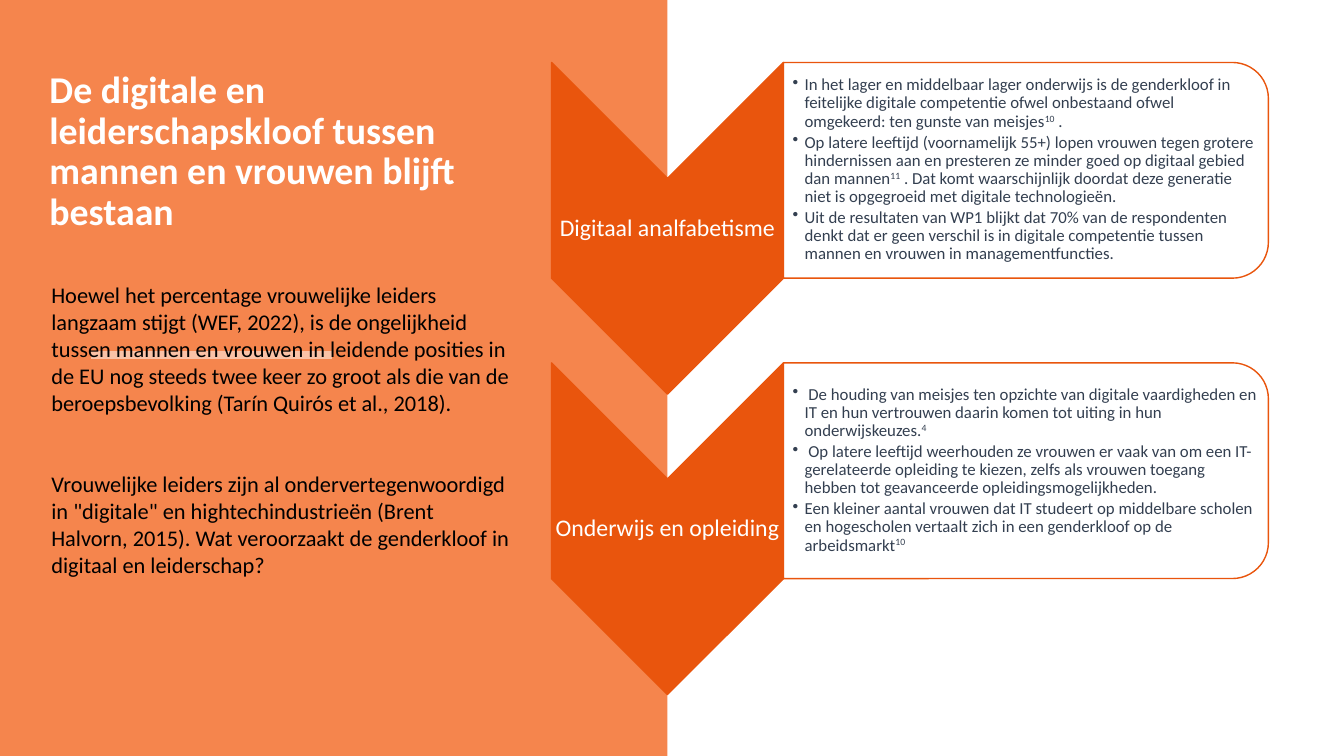
import pptx
import pptx.util
import pptx.dml.color
import pptx.enum.shapes
import pptx.enum.text
import lxml.etree

Inches, Pt = pptx.util.Inches, pptx.util.Pt
SHAPES = pptx.enum.shapes.MSO_SHAPE
ANCHOR = pptx.enum.text.MSO_ANCHOR
A = "{http://schemas.openxmlformats.org/drawingml/2006/main}"

deck = pptx.Presentation()
deck.slide_width, deck.slide_height = Inches(13.33), Inches(7.5)
slide = deck.slides.add_slide(deck.slide_layouts[6])


def paint(target, color):
    if hasattr(target, "solid"):
        target.solid()
        target = target.fore_color
    elif hasattr(target, "color"):
        target = target.color
    target.rgb = pptx.dml.color.RGBColor.from_string(color)


def write(box, insets, anchor, paragraphs, size, color, spacing=1.0):
    frame = slide.shapes.add_textbox(*map(Inches, box)).text_frame
    frame.word_wrap = True
    frame.vertical_anchor = anchor
    frame.margin_left, frame.margin_top, frame.margin_right, frame.margin_bottom = map(Inches, insets)
    for index, text in enumerate(paragraphs):
        paragraph = frame.paragraphs[0] if index == 0 else frame.add_paragraph()
        paragraph.line_spacing = spacing
        paragraph.font.name = "Calibri"
        paragraph.font.size = Pt(size)
        paint(paragraph.font, color)
        for part, words in enumerate(text.split("^")):
            if words:
                run = paragraph.add_run()
                run.text = words
                if part % 2:
                    run._r.get_or_add_rPr().set("baseline", "30000")
    return frame.paragraphs


center_x = 6.62
panel = slide.shapes.add_shape(SHAPES.RECTANGLE, 0, 0, Inches(center_x), deck.slide_height)
panel.shadow.inherit = False
paint(panel.fill, "F5854D")
panel.line.fill.background()

accent = slide.shapes.add_connector(
    pptx.enum.shapes.MSO_CONNECTOR.STRAIGHT, Inches(3.29), Inches(3.52), Inches(0.9), Inches(3.52))
paint(accent.line, "FAC2A6")
accent.line.width = Pt(6)
lxml.etree.SubElement(accent._element.spPr, A + "effectLst")

panel_insets = (0, 0.05, 0.1, 0.05)
title = write((0.49, 0.45, 4.38, 1.92), panel_insets, ANCHOR.BOTTOM,
              ["De digitale en leiderschapskloof tussen mannen en vrouwen blijft bestaan"],
              27, "FFFFFF", 0.9)
title[0].font.bold = True

intro = write((0.51, 2.74, 4.66, 3.52), panel_insets, ANCHOR.TOP, [
    "Hoewel het percentage vrouwelijke leiders langzaam stijgt (WEF, 2022), is de ongelijkheid "
    "tussen mannen en vrouwen in leidende posities in de EU nog steeds twee keer zo groot als die "
    "van de beroepsbevolking (Tarín Quirós et al., 2018).",
    "Vrouwelijke leiders zijn al ondervertegenwoordigd in \"digitale\" en hightechindustrieën (Brent "
    "Halvorn, 2015). Wat veroorzaakt de genderkloof in digitaal en leiderschap?",
], 16, "000000")
intro[1].space_before = Pt(39)

causes = [
    ("Digitaal analfabetisme", [
        "In het lager en middelbaar lager onderwijs is de genderkloof in feitelijke digitale "
        "competentie ofwel onbestaand ofwel omgekeerd: ten gunste van meisjes^10^ .",
        "Op latere leeftijd (voornamelijk 55+) lopen vrouwen tegen grotere hindernissen aan en "
        "presteren ze minder goed op digitaal gebied dan mannen^11^ . Dat komt waarschijnlijk "
        "doordat deze generatie niet is opgegroeid met digitale technologieën.",
        "Uit de resultaten van WP1 blijkt dat 70% van de respondenten denkt dat er geen verschil is "
        "in digitale competentie tussen mannen en vrouwen in managementfuncties.",
    ]),
    ("Onderwijs en opleiding", [
        " De houding van meisjes ten opzichte van digitale vaardigheden en IT en hun vertrouwen "
        "daarin komen tot uiting in hun onderwijskeuzes.^4",
        " Op latere leeftijd weerhouden ze vrouwen er vaak van om een IT-gerelateerde opleiding te "
        "kiezen, zelfs als vrouwen toegang hebben tot geavanceerde opleidingsmogelijkheden.",
        "Een kleiner aantal vrouwen dat IT studeert op middelbare scholen en hogescholen vertaalt "
        "zich in een genderkloof op de arbeidsmarkt^10",
    ]),
]
first_top, row_pitch = 0.62, 2.98
arrow_width, arrow_height = 2.3, 3.29
card_left, card_width, card_height = 7.77, 4.81, 2.14

for row, (cause, findings) in enumerate(causes):
    top = first_top + row * row_pitch
    outlines = [
        (SHAPES.CHEVRON, center_x, top + arrow_height / 2, arrow_height, arrow_width, "E9550D"),
        (SHAPES.ROUND_2_SAME_RECTANGLE, card_left + card_width / 2, top + card_height / 2,
         card_height, card_width, "FFFFFF"),
    ]
    for kind, middle_x, middle_y, width, height, color in outlines:
        outline = slide.shapes.add_shape(
            kind, Inches(middle_x - width / 2), Inches(middle_y - height / 2), Inches(width), Inches(height))
        outline.rotation = 90
        outline.shadow.inherit = False
        paint(outline.fill, color)
        paint(outline.line, "E9550D")
        outline.line.width = Pt(1)
    card_fill = outline._element.spPr.find(f"{A}solidFill/{A}srgbClr")
    lxml.etree.SubElement(card_fill, A + "alpha", val="90000")

    label = write((center_x - arrow_width / 2, top + arrow_width / 2, arrow_width, 0.99),
                  (0.01,) * 4, ANCHOR.MIDDLE, [cause], 17, "FFFFFF", 0.9)
    label[0].alignment = pptx.enum.text.PP_ALIGN.CENTER

    bullets = write((card_left, top + 0.1, 4.71, 1.93), (0.09, 0.01, 0.01, 0.01),
                    ANCHOR.MIDDLE, findings, 12, "333F50", 0.9)
    for bullet in bullets:
        bullet.space_after = Pt(2)
        properties = bullet._p.get_or_add_pPr()
        properties.set("marL", str(Inches(0.12)))
        properties.set("indent", str(-Inches(0.12)))
        mark = lxml.etree.Element(A + "buChar", char="•")
        properties.find(A + "defRPr").addprevious(mark)

deck.save("out.pptx")
